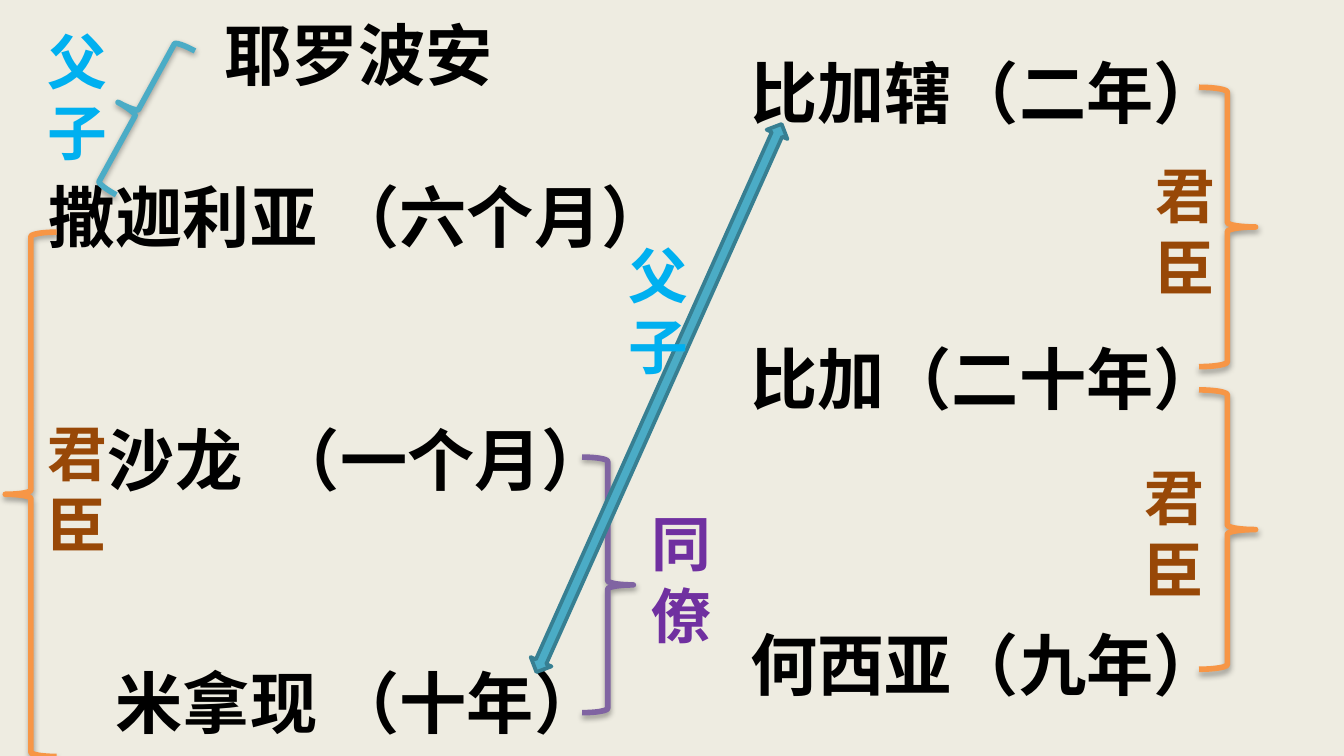
from pptx import Presentation
from pptx.dml.color import RGBColor
from pptx.enum import shapes as sh, text as tx
from pptx.util import Cm, Pt

BLACK = RGBColor(0x00, 0x00, 0x00)
CREAM = RGBColor(0xEE, 0xEC, 0xE1)
TEAL = RGBColor(0x4B, 0xAC, 0xC6)
DEEP = RGBColor(0x37, 0x7F, 0x92)
ORANGE = RGBColor(0xF7, 0x96, 0x46)
MAUVE = RGBColor(0x80, 0x64, 0xA2)
SKY = RGBColor(0x00, 0xB0, 0xF0)
PURPLE = RGBColor(0x70, 0x30, 0xA0)
BROWN = RGBColor(0x98, 0x48, 0x07)

WIDE, HIGH = Cm(25.4), Cm(14.29)
HALF = Cm(13.55)

LEFT = [("耶罗波安", 0), ("撒迦利亚 （六个月）", 43.5),
        ("沙龙  （一个月）", 87), ("米拿现 （十年）", 87)]
RIGHT = [("比加辖（二年）", 0), ("比加（二十年）", 110), ("何西亚（九年）", 110)]

BRACES = [
    (2.18, 0.58, 0.81, 3.1, 28.7, TEAL),
    (0.1, 4.39, 0.97, 9.91, 0, ORANGE),
    (11, 8.64, 0.97, 4.83, 180, MAUVE),
    (22.66, 1.65, 1.07, 5.28, 180, ORANGE),
    (22.66, 7.37, 1.07, 5.28, 180, ORANGE),
]
LABELS = [
    (0.64, 0.79, "父子", "Calibri", SKY),
    (11.63, 4.83, "父子", "Calibri", SKY),
    (12.07, 9.91, "同僚", "Calibri", PURPLE),
    (0.64, 8.2, "君臣", "Arial", BROWN),
    (21.39, 9.04, "君臣", "Arial", BROWN),
    (21.59, 3.33, "君臣", "Arial", BROWN),
]


def setup(frame):
    """Wrap a text frame and centre it vertically."""
    frame.word_wrap = True
    frame.auto_size = tx.MSO_AUTO_SIZE.NONE
    frame.vertical_anchor = tx.MSO_ANCHOR.MIDDLE


def write(para, words, size, face, color):
    """Add one bold run to a paragraph."""
    run = para.add_run()
    run.text = words
    font = run.font
    font.size, font.name, font.bold = Pt(size), face, True
    font.color.rgb = color


def kings(box, lines):
    """Fill a box with centred names, each with its gap above."""
    frame = box.text_frame
    setup(frame)
    for i, (words, gap) in enumerate(lines):
        para = frame.add_paragraph() if i else frame.paragraphs[0]
        para.alignment = tx.PP_ALIGN.CENTER
        para.space_before = Pt(gap)
        write(para, words, 36, "Calibri", BLACK)


def brace(slide, x, y, w, h, turn, color):
    """Draw an outlined brace with the theme shadow."""
    item = slide.shapes.add_shape(sh.MSO_SHAPE.LEFT_BRACE, Cm(x), Cm(y), Cm(w), Cm(h))
    item.rotation = turn
    item.fill.background()
    item.line.color.rgb = color
    item.line.width = Pt(3)


def arrow(slide):
    """Draw the tilted double arrow between father and son."""
    item = slide.shapes.add_shape(
        sh.MSO_SHAPE.UP_DOWN_ARROW, Cm(12.24), Cm(1.85), Cm(0.43), Cm(11.35))
    item.rotation = 24.1
    item.shadow.inherit = False
    item.fill.solid()
    item.fill.fore_color.rgb = TEAL
    item.line.color.rgb = DEEP
    item.line.width = Pt(2)


def label(slide, x, y, words, face, color):
    """Add a narrow label that wraps to one character a line."""
    box = slide.shapes.add_textbox(Cm(x), Cm(y), Cm(1.47), Cm(2.06))
    setup(box.text_frame)
    write(box.text_frame.paragraphs[0], words, 32, face, color)


def main():
    """Build and save the slide."""
    deck = Presentation()
    deck.slide_width, deck.slide_height = WIDE, HIGH
    slide = deck.slides.add_slide(deck.slide_layouts[5])
    back = slide.background.fill
    back.solid()
    back.fore_color.rgb = CREAM

    title = slide.shapes.title
    title.left, title.top, title.width, title.height = 0, 0, HALF, HIGH
    kings(title, LEFT)
    kings(slide.shapes.add_textbox(WIDE - HALF, 0, HALF, HIGH), RIGHT)

    for row in BRACES:
        brace(slide, *row)
    arrow(slide)
    for row in LABELS:
        label(slide, *row)
    deck.save("out.pptx")


if __name__ == "__main__":
    main()
